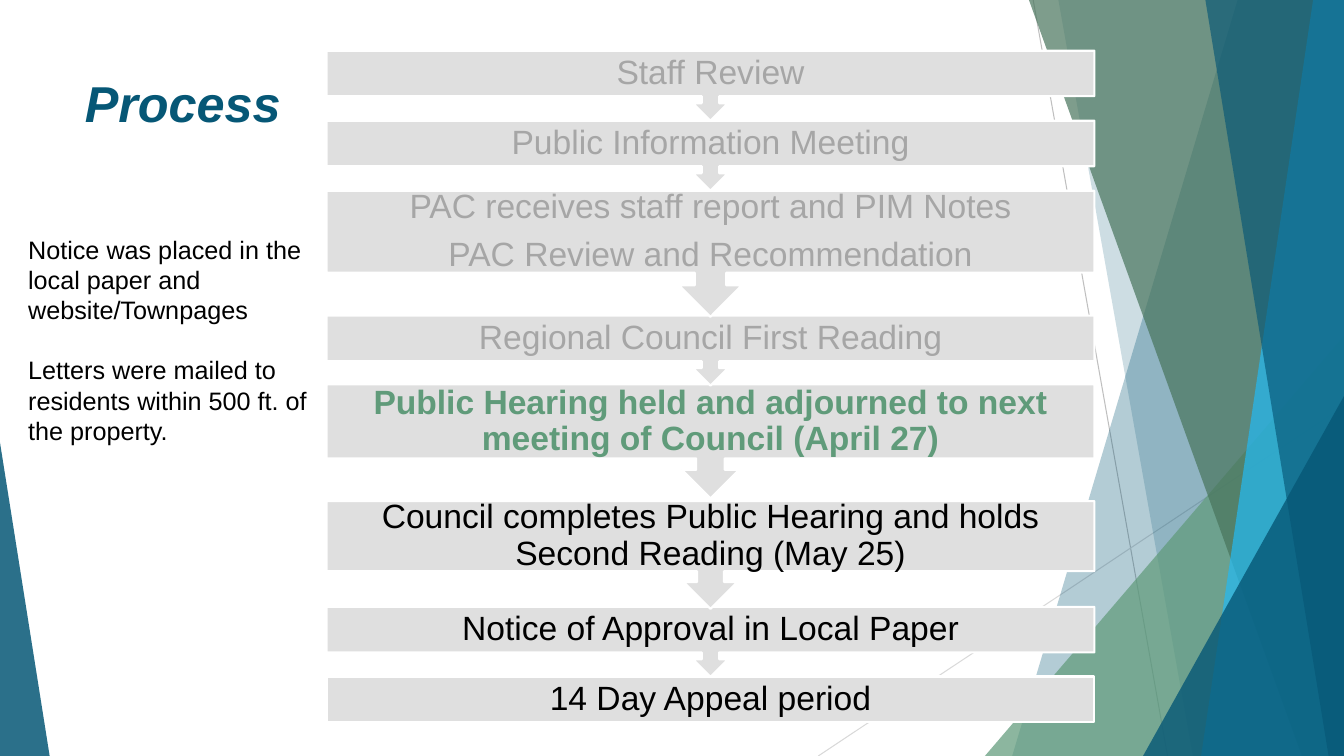
from lxml import etree
from pptx import Presentation
from pptx.dml.color import RGBColor
from pptx.enum.shapes import MSO_CONNECTOR, MSO_SHAPE
from pptx.enum.text import MSO_ANCHOR, PP_ALIGN
from pptx.oxml.ns import qn
from pptx.util import Pt

STRAIGHT = MSO_CONNECTOR.STRAIGHT
ISOSCELES = MSO_SHAPE.ISOSCELES_TRIANGLE
CALLOUT = MSO_SHAPE.DOWN_ARROW_CALLOUT
RECT = MSO_SHAPE.RECTANGLE
MIDDLE = MSO_ANCHOR.MIDDLE
CENTER = PP_ALIGN.CENTER

NAVY = RGBColor(0x06, 0x57, 0x76)
GREEN = RGBColor(0x60, 0x9B, 0x7A)
DARK_GREEN = RGBColor(0x48, 0x74, 0x5C)
SKY = RGBColor(0x23, 0xBA, 0xF4)
BOX_GREY = RGBColor(0xDF, 0xDF, 0xDF)
DONE_GREY = RGBColor(0xA6, 0xA6, 0xA6)
LINE_GREY = RGBColor(0xBF, 0xBF, 0xBF)
PALE_GREY = RGBColor(0xD9, 0xD9, 0xD9)
WHITE = RGBColor(0xFF, 0xFF, 0xFF)
BLACK = RGBColor(0, 0, 0)

FONT = "Arial"
WIDTH, HEIGHT = 960, 540
STEP_LEFT, STEP_WIDTH = 233.25, 548.5

# Process steps: top, height with arrow, colour, bold, paragraphs
STEPS = [
    (36.25, 50, DONE_GREY, False, ["Staff Review"]),
    (86.25, 50, DONE_GREY, False, ["Public Information Meeting"]),
    (136.25, 90, DONE_GREY, False, ["PAC receives staff report and PIM Notes",
                                    "PAC Review and Recommendation"]),
    (225.5, 50, DONE_GREY, False, ["Regional Council First Reading"]),
    (274.5, 81.5, GREEN, True,
     ["Public Hearing held and adjourned to next meeting of Council (April 27)"]),
    (358, 77, BLACK, False,
     ["Council completes Public Hearing and holds Second Reading (May 25)"]),
    (433.5, 50, BLACK, False, ["Notice of Approval in Local Paper"]),
    (483.25, 32.5, BLACK, False, ["14 Day Appeal period"]),
]
NOTES = ["Notice was placed in the local paper and website/Townpages",
         "Letters were mailed to residents within 500 ft. of the property."]


def style_facet(s, color, opacity):
    s.shadow.inherit = False
    s.line.fill.background()
    s.fill.solid()
    s.fill.fore_color.rgb = color
    clr = s._element.spPr.find(qn("a:solidFill"))[0]
    etree.SubElement(clr, qn("a:alpha")).set("val", str(opacity * 1000))


def add_band(slide, top_x, bottom_x, color, opacity):
    """Full-height band from a slanted left edge to the slide's right edge."""
    fb = slide.shapes.build_freeform(Pt(top_x), 0)
    fb.add_line_segments([(Pt(WIDTH), 0), (Pt(WIDTH), Pt(HEIGHT)),
                          (Pt(bottom_x), Pt(HEIGHT))], close=True)
    style_facet(fb.convert_to_shape(), color, opacity)


def add_corner(slide, left, top, width, apex, color, opacity):
    s = slide.shapes.add_shape(ISOSCELES, Pt(left), Pt(top), Pt(width), Pt(HEIGHT - top))
    s.adjustments[0] = apex
    style_facet(s, color, opacity)


def add_thin_line(slide, x1, y1, x2, y2, color):
    line = slide.shapes.add_connector(STRAIGHT, Pt(x1), Pt(y1), Pt(x2), Pt(y2))
    line.line.color.rgb = color
    line.line.width = Pt(0.75)
    etree.SubElement(line._element.spPr, qn("a:effectLst"))


def write_text(tf, paragraphs, size, color, bold=False, italic=False):
    tf.word_wrap = True
    tf.text = "\n".join(paragraphs)
    for p in tf.paragraphs:
        for r in p.runs:
            r.font.name = FONT
            r.font.size = Pt(size)
            r.font.color.rgb = color
            r.font.bold = bold
            r.font.italic = italic


def add_text(slide, left, top, width, height, paragraphs, size, color, **style):
    tf = slide.shapes.add_textbox(Pt(left), Pt(top), Pt(width), Pt(height)).text_frame
    write_text(tf, paragraphs, size, color, **style)
    for p in tf.paragraphs[1:]:
        p.space_before = Pt(21.5)


def add_step(slide, kind, top, height, color, bold, paragraphs):
    s = slide.shapes.add_shape(kind, Pt(STEP_LEFT), Pt(top), Pt(STEP_WIDTH), Pt(height))
    s.shadow.inherit = False
    s.fill.solid()
    s.fill.fore_color.rgb = BOX_GREY
    s.line.color.rgb = WHITE
    s.line.width = Pt(1.5)
    tf = s.text_frame
    write_text(tf, paragraphs, 24, color, bold)
    tf.vertical_anchor = MIDDLE
    tf.margin_left = tf.margin_right = Pt(13.5)
    tf.margin_top = tf.margin_bottom = 0
    for p in tf.paragraphs:
        p.alignment = CENTER
        p.line_spacing = 0.9
        p.space_after = Pt(8.4)


def add_background(slide):
    add_thin_line(slide, 738, 0, 834, HEIGHT, LINE_GREY)
    add_thin_line(slide, WIDTH, 290, 584.5, HEIGHT, PALE_GREY)
    add_band(slide, 884, 723, NAVY, 30)
    add_band(slide, 756, 852, NAVY, 20)
    add_corner(slide, 703.5, 240, 256.5, 1, GREEN, 72)
    add_band(slide, 735, 930, DARK_GREEN, 70)
    add_band(slide, 938, 858, SKY, 70)
    add_band(slide, 861, 949, NAVY, 65)
    add_corner(slide, 816.5, 283, 143.5, 1, NAVY, 80)
    add_corner(slide, 0, 316, 35.5, 0, NAVY, 85)


def main():
    prs = Presentation()
    prs.slide_width, prs.slide_height = Pt(WIDTH), Pt(HEIGHT)
    slide = prs.slides.add_slide(prs.slide_layouts[6])

    add_background(slide)
    add_text(slide, 53.5, 48, 631.5, 51, ["Process"], 36, NAVY, bold=True, italic=True)

    # Steps from last to first, so each arrow tip lies over the next box
    for step in reversed(STEPS):
        add_step(slide, RECT if step is STEPS[-1] else CALLOUT, *step)

    # Side notes
    add_text(slide, 13, 163.5, 220, 160, NOTES, 18, BLACK)

    prs.save("out.pptx")


if __name__ == "__main__":
    main()
